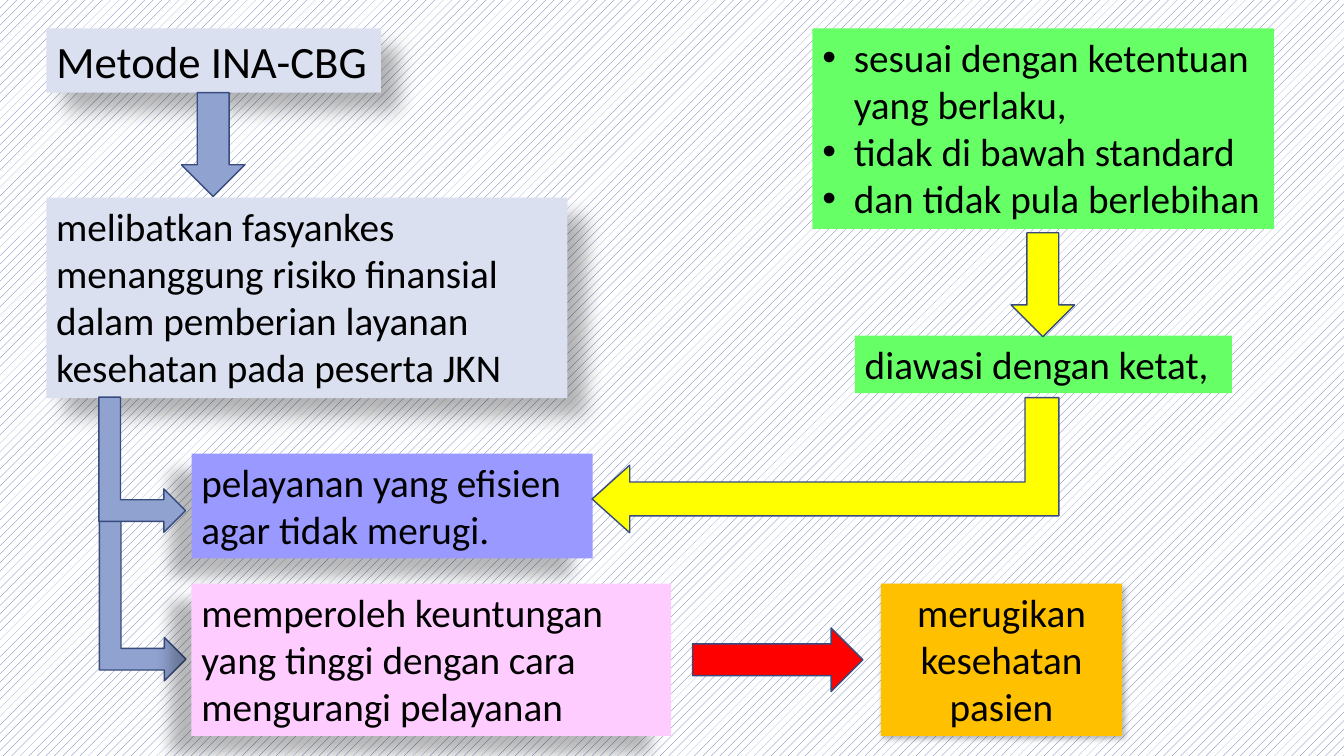
from dataclasses import dataclass
from typing import Optional

import pptx
import pptx.dml.color
import pptx.enum.dml
import pptx.enum.shapes
import pptx.enum.text
import pptx.oxml.ns
import pptx.util
from lxml import etree

Pt = pptx.util.Pt
RGBColor = pptx.dml.color.RGBColor
MSO_SHAPE = pptx.enum.shapes.MSO_SHAPE
PP_ALIGN = pptx.enum.text.PP_ALIGN
qn = pptx.oxml.ns.qn

BLACK = RGBColor(0x00, 0x00, 0x00)
WHITE = RGBColor(0xFF, 0xFF, 0xFF)
HATCH = RGBColor(0x4A, 0x66, 0xAC)
OUTLINE = RGBColor(0x37, 0x4B, 0x7F)
BLUE = RGBColor(0x90, 0xA2, 0xCF)
PALE_BLUE = RGBColor(0xDA, 0xE0, 0xEF)
VIOLET = RGBColor(0x99, 0x99, 0xFF)
PINK = RGBColor(0xFF, 0xCC, 0xFF)
ORANGE = RGBColor(0xFF, 0xC0, 0x00)
GREEN = RGBColor(0x66, 0xFF, 0x66)
YELLOW = RGBColor(0xFF, 0xFF, 0x00)
RED = RGBColor(0xFF, 0x00, 0x00)

INDENT = 22.5


@dataclass
class Shadow:
    opacity: float  # percent
    blur: float
    distance: float
    angle: float  # degrees


@dataclass
class Box:
    left: float
    top: float
    width: float
    height: float
    fill: RGBColor
    lines: list[str]
    shadow: Optional[Shadow] = None
    size: float = 28
    align: PP_ALIGN = PP_ALIGN.LEFT
    bullets: bool = False
    wrap: bool = True


@dataclass
class Arrow:
    left: float
    top: float
    width: float
    height: float
    fill: RGBColor
    kind: MSO_SHAPE = MSO_SHAPE.DOWN_ARROW
    rotation: float = 0
    flip: bool = False
    head: Optional[float] = None


LOWER_RIGHT = Shadow(30, 15, 18, 45)
LOWER_LEFT = Shadow(28, 11.8, 19.7, 141)
SLIGHT = Shadow(30, 4.5, 2.6, 53)
BENT = MSO_SHAPE.BENT_UP_ARROW

# Boxes and arrows from back to front
ITEMS = [
    Arrow(43.2, 396.7, 117.4, 61.9, BLUE, BENT, 90),
    Box(33.1, 20.2, 239, 46.1, PALE_BLUE, ["Metode INA-CBG"], LOWER_RIGHT, size=32, wrap=False),
    Arrow(129.6, 66.2, 45.4, 74.2, BLUE),
    Box(33.1, 141.1, 372.2, 143.3, PALE_BLUE,
        ["melibatkan fasyankes",
         "menanggung risiko finansial dalam pemberian layanan kesehatan pada peserta JKN"],
        LOWER_RIGHT),
    Box(136.8, 324, 286.6, 74.9, VIOLET, ["pelayanan yang efisien agar tidak merugi."], LOWER_LEFT),
    Box(136.8, 416.9, 342.7, 108.7, PINK,
        ["memperoleh keuntungan yang tinggi dengan cara mengurangi pelayanan"], LOWER_LEFT),
    Box(629.3, 416.9, 172.1, 108.7, ORANGE, ["merugikan kesehatan pasien"], SLIGHT,
        align=PP_ALIGN.CENTER),
    Arrow(53.3, 301, 96.5, 61.9, BLUE, BENT, 90),
    Arrow(532.8, 410.4, 45.4, 121.7, RED, rotation=270),
    Box(610.6, 239.8, 269.3, 41, GREEN, ["diawasi dengan ketat,"], wrap=False),
    Box(580.3, 20.2, 329.8, 143.3, GREEN,
        ["sesuai dengan ketentuan yang berlaku,", "tidak di bawah standard",
         "dan tidak pula berlebihan"], bullets=True),
    Arrow(541.4, 165.6, 96.5, 333.4, YELLOW, BENT, 270, flip=True, head=0.279),
    Arrow(722.2, 166.3, 45.4, 74.2, YELLOW),
]


def add_shadow(sp, shadow: Shadow) -> None:
    effects = sp._element.spPr.find(qn("a:effectLst"))
    outer = etree.SubElement(
        effects, qn("a:outerShdw"), blurRad=str(Pt(shadow.blur)), dist=str(Pt(shadow.distance)),
        dir=str(round(shadow.angle * 60000)), algn="ctr", rotWithShape="0")
    color = etree.SubElement(outer, qn("a:srgbClr"), val=str(BLACK))
    etree.SubElement(color, qn("a:alpha"), val=str(round(shadow.opacity * 1000)))


def add_bullet(p) -> None:
    pPr = p._p.get_or_add_pPr()
    pPr.set("marL", str(Pt(INDENT)))
    pPr.set("indent", str(-Pt(INDENT)))
    etree.SubElement(pPr, qn("a:buFont"), typeface="Arial")
    etree.SubElement(pPr, qn("a:buChar"), char="•")


def write_text(tf, lines: list[str], *, size: float, align: PP_ALIGN, bullets: bool) -> None:
    for i, line in enumerate(lines):
        p = tf.paragraphs[0] if i == 0 else tf.add_paragraph()
        if bullets:
            add_bullet(p)
        p.alignment = align
        r = p.add_run()
        r.text = line
        r.font.name = "Calibri"
        r.font.size = Pt(size)
        r.font.color.rgb = BLACK


def add_box(s, box: Box) -> None:
    sp = s.shapes.add_textbox(Pt(box.left), Pt(box.top), Pt(box.width), Pt(box.height))
    sp.fill.solid()
    sp.fill.fore_color.rgb = box.fill
    sp.shadow.inherit = False
    if box.shadow:
        add_shadow(sp, box.shadow)
    tf = sp.text_frame
    tf.word_wrap = box.wrap
    tf.auto_size = pptx.enum.text.MSO_AUTO_SIZE.SHAPE_TO_FIT_TEXT
    write_text(tf, box.lines, size=box.size, align=box.align, bullets=box.bullets)


def add_arrow(s, arrow: Arrow) -> None:
    sp = s.shapes.add_shape(arrow.kind, Pt(arrow.left), Pt(arrow.top),
                            Pt(arrow.width), Pt(arrow.height))
    sp.rotation = arrow.rotation
    if arrow.flip:
        sp._element.spPr.xfrm.set("flipH", "1")
    if arrow.head is not None:
        sp.adjustments[2] = arrow.head
    sp.fill.solid()
    sp.fill.fore_color.rgb = arrow.fill
    sp.line.color.rgb = OUTLINE
    sp.line.width = Pt(1)
    sp.shadow.inherit = False


def main() -> None:
    prs = pptx.Presentation()
    prs.slide_width, prs.slide_height = Pt(960), Pt(540)
    s = prs.slides.add_slide(prs.slide_layouts[6])

    # Hatched background
    fill = s.background.fill
    fill.patterned()
    fill.pattern = pptx.enum.dml.MSO_PATTERN.PERCENT_20
    fill.fore_color.rgb = HATCH
    fill.back_color.rgb = WHITE

    # Flow chart
    for item in ITEMS:
        if isinstance(item, Box):
            add_box(s, item)
        else:
            add_arrow(s, item)
    prs.save("out.pptx")


if __name__ == "__main__":
    main()
